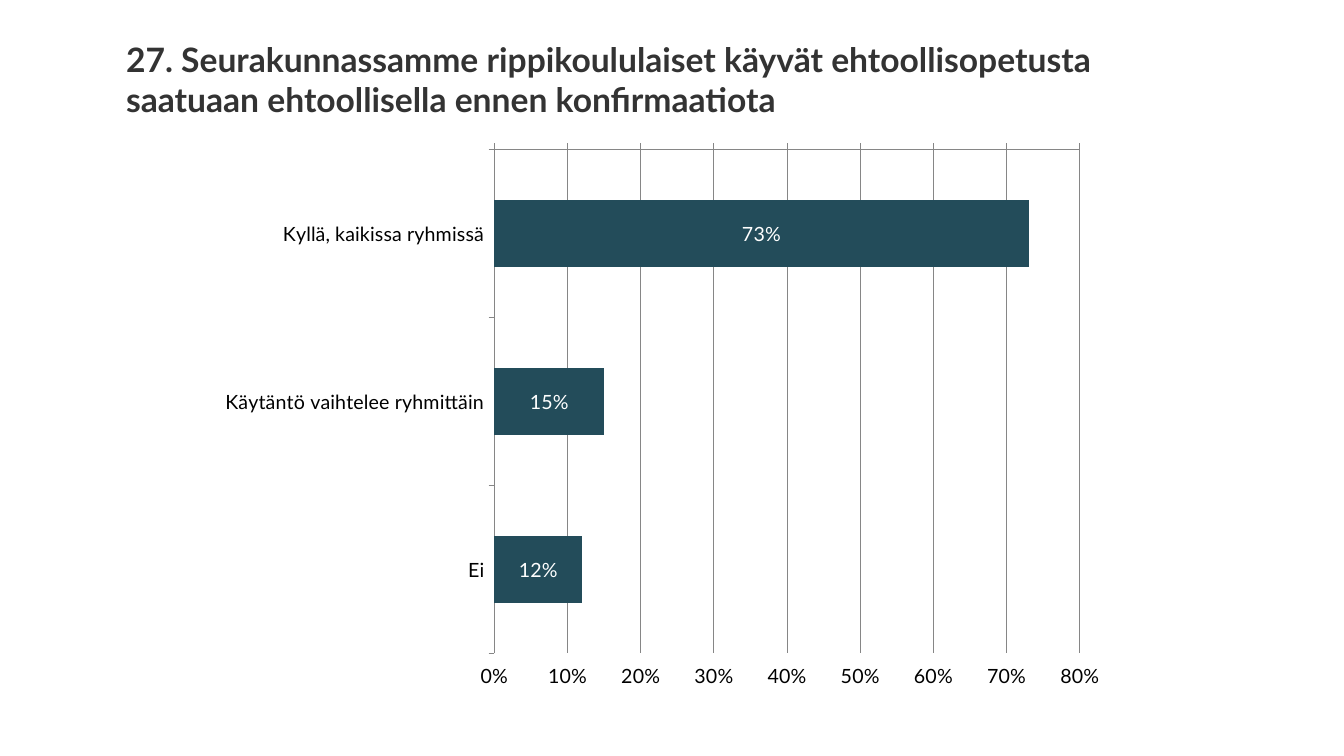
"""Build a slide with a survey question and a bar chart of its answers."""
from lxml import etree
from pptx import Presentation
from pptx.chart.data import CategoryChartData
from pptx.dml.color import RGBColor
from pptx.enum.chart import (XL_CHART_TYPE, XL_LABEL_POSITION,
                             XL_TICK_LABEL_POSITION, XL_TICK_MARK)
from pptx.enum.text import MSO_ANCHOR, PP_ALIGN
from pptx.util import Inches, Pt

BAR = XL_CHART_TYPE.BAR_CLUSTERED
CENTER = XL_LABEL_POSITION.CENTER
LOW, HIGH = XL_TICK_LABEL_POSITION.LOW, XL_TICK_LABEL_POSITION.HIGH
OUT = XL_TICK_MARK.OUTSIDE
LEFT, MIDDLE = PP_ALIGN.LEFT, MSO_ANCHOR.MIDDLE

TITLE = ("27. Seurakunnassamme rippikoululaiset käyvät ehtoollisopetusta "
         "saatuaan ehtoollisella ennen konfirmaatiota")
ANSWERS = {
    "Kyllä, kaikissa ryhmissä": 0.73,
    "Käytäntö vaihtelee ryhmittäin": 0.15,
    "Ei": 0.12,
}
FONT = "Lato"
INK, BLACK, WHITE, TEAL, GRAY = "333333", "000000", "FFFFFF", "234C5A", "868686"
HEAD = (1.15, 0.33, 11.04, 0.91)
GRAPH = (2.06, 1.38, 9.03, 5.56)
PLOT = {"x": 0.315, "y": 0.018, "w": 0.643, "h": 0.9}


def color(code):
    return RGBColor.from_string(code)


def style(font, size, code, bold=False):
    font.name, font.size, font.bold = FONT, Pt(size), bold
    font.color.rgb = color(code)


def rule(line):
    line.color.rgb = color(GRAY)
    line.width = Pt(0.75)


def add_title(slide):
    title = slide.shapes.title
    title.left, title.top, title.width, title.height = map(Inches, HEAD)
    frame = title.text_frame
    frame.text = TITLE
    frame.word_wrap = True
    frame.vertical_anchor = MIDDLE
    para = frame.paragraphs[0]
    para.alignment = LEFT
    style(para.font, 24, INK, True)


def place_plot(chart):
    area = chart.plots[0]._element.getparent()
    space = etree.QName(area).namespace
    for old in area.findall(f"{{{space}}}layout"):
        area.remove(old)
    layout = etree.Element(f"{{{space}}}layout")
    manual = etree.SubElement(layout, f"{{{space}}}manualLayout")
    modes = {"layoutTarget": "inner", "xMode": "edge", "yMode": "edge"}
    for tag, val in {**modes, **PLOT}.items():
        etree.SubElement(manual, f"{{{space}}}{tag}").set("val", str(val))
    area.insert(0, layout)


def add_graph(slide):
    data = CategoryChartData(number_format="0%")
    data.categories = list(ANSWERS)
    data.add_series("Series 1", list(ANSWERS.values()))
    chart = slide.shapes.add_chart(BAR, *map(Inches, GRAPH), data).chart
    chart.has_legend = chart.has_title = False
    style(chart.font, 14, BLACK)

    plot = chart.plots[0]
    plot.gap_width = 150
    plot.vary_by_categories = False
    fill = plot.series[0].format.fill
    fill.solid()
    fill.fore_color.rgb = color(TEAL)
    plot.has_data_labels = True
    labels = plot.data_labels
    labels.show_value = True
    labels.number_format, labels.number_format_is_linked = "0%", False
    labels.position = CENTER
    style(labels.font, 14, WHITE)

    cats, vals = chart.category_axis, chart.value_axis
    cats.reverse_order = True
    vals.minimum_scale, vals.maximum_scale, vals.major_unit = 0, 0.8, 0.1
    vals.has_major_gridlines = True
    rule(vals.major_gridlines.format.line)
    vals.tick_labels.number_format = "0%"
    vals.tick_labels.number_format_is_linked = False
    for axis, side in ((cats, LOW), (vals, HIGH)):
        axis.major_tick_mark = OUT
        axis.tick_label_position = side
        rule(axis.format.line)
    place_plot(chart)


def main():
    deck = Presentation()
    deck.slide_width, deck.slide_height = Inches(13.33), Inches(7.5)
    slide = deck.slides.add_slide(deck.slide_layouts[5])
    add_title(slide)
    add_graph(slide)
    deck.save("out.pptx")


if __name__ == "__main__":
    main()
